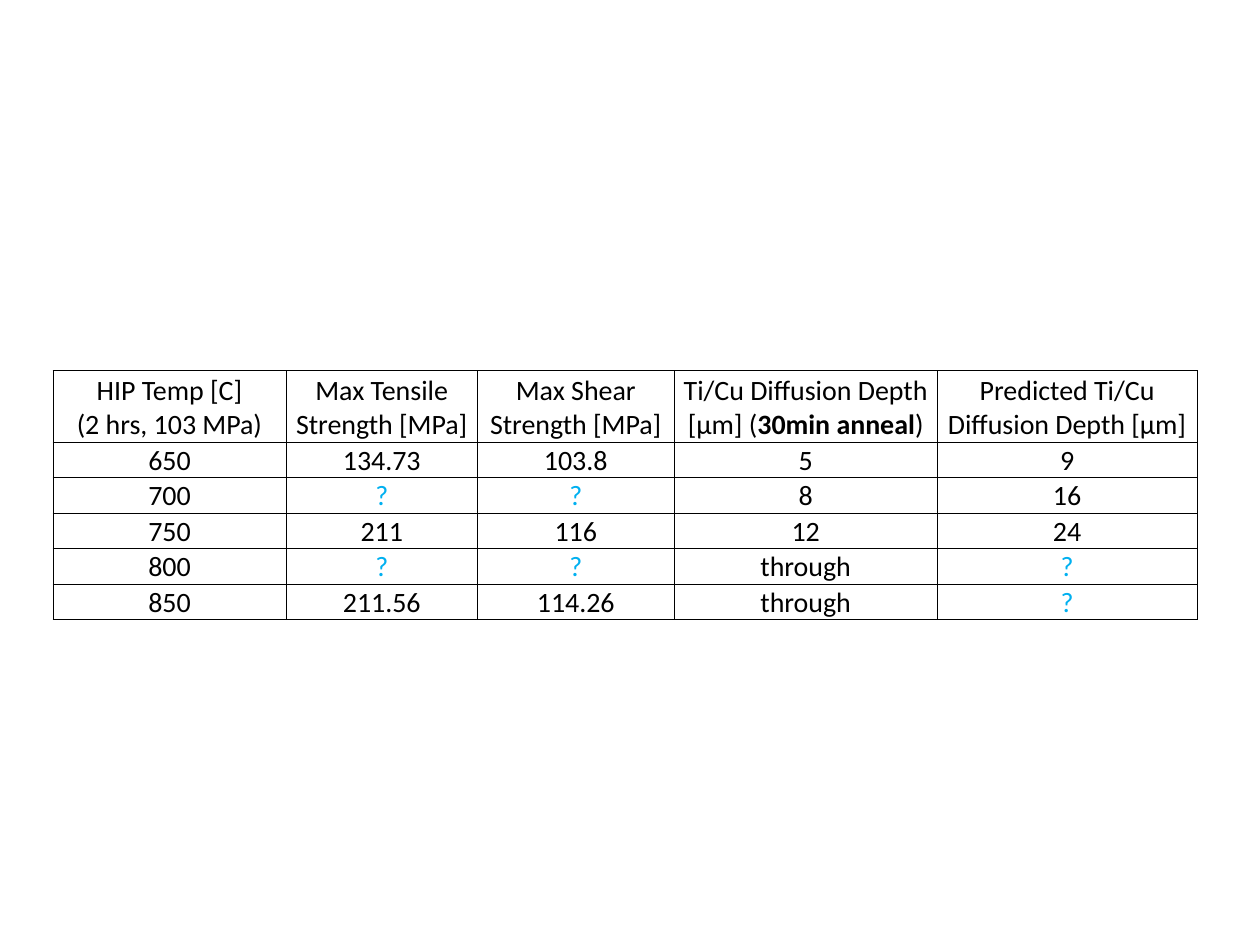
from lxml.etree import SubElement
from pptx import Presentation
from pptx.dml.color import RGBColor
from pptx.enum.text import MSO_ANCHOR as Anchor, PP_ALIGN as Align
from pptx.oxml.ns import qn
from pptx.util import Inches, Pt

BLACK = RGBColor(0x00, 0x00, 0x00)
UNKNOWN_BLUE = RGBColor(0x00, 0xB0, 0xF0)
FONT = "Calibri"
COLUMN_WIDTHS = [1.85, 1.52, 1.56, 2.09, 2.06]
HEADER_HEIGHT, ROW_HEIGHT = 0.57, 0.21

# Each heading is a list of (text, bold) runs.
HEADINGS = [
    [("HIP Temp [C]\n(2 hrs, 103 MPa)", False)],
    [("Max Tensile Strength [MPa]", False)],
    [("Max Shear Strength [MPa]", False)],
    [("Ti/Cu Diffusion Depth [μm] (", False), ("30min anneal", True), (")", False)],
    [("Predicted Ti/Cu Diffusion Depth [μm]", False)],
]
RESULTS = [
    ["650", "134.73", "103.8", "5", "9"],
    ["700", "?", "?", "8", "16"],
    ["750", "211", "116", "12", "24"],
    ["800", "?", "?", "through", "?"],
    ["850", "211.56", "114.26", "through", "?"],
]


def add_run(para, text, bold):
    """Add a run; a newline in the text becomes a line break."""
    for number, line in enumerate(text.split("\n")):
        if number:
            para.add_line_break()
        span = para.add_run()
        span.text = line
        span.font.name = FONT
        span.font.size = Pt(16)
        span.font.bold = bold
        span.font.color.rgb = UNKNOWN_BLUE if line == "?" else BLACK


def add_borders(cell):
    properties = cell._tc.get_or_add_tcPr()
    for side in ("a:lnL", "a:lnR", "a:lnT", "a:lnB"):
        line = SubElement(properties, qn(side), w=str(Pt(0.5)))
        fill = SubElement(line, qn("a:solidFill"))
        SubElement(fill, qn("a:srgbClr"), val=str(BLACK))


def fill_cell(cell, runs):
    cell.margin_left = cell.margin_right = cell.margin_top = Inches(0.01)
    cell.margin_bottom = 0
    cell.vertical_anchor = Anchor.BOTTOM
    add_borders(cell)
    cell.fill.background()
    para = cell.text_frame.paragraphs[0]
    para.alignment = Align.CENTER
    for text, bold in runs:
        add_run(para, text, bold)


def add_results_table(page):
    rows = [HEADINGS] + [[[(value, False)] for value in result] for result in RESULTS]
    height = HEADER_HEIGHT + ROW_HEIGHT * len(RESULTS)
    table = page.shapes.add_table(
        len(rows), len(COLUMN_WIDTHS), Inches(0.42), Inches(2.94),
        Inches(sum(COLUMN_WIDTHS)), Inches(height)).table
    table.first_row = table.horz_banding = False
    for column, width in zip(table.columns, COLUMN_WIDTHS):
        column.width = Inches(width)
    for number, (row, contents) in enumerate(zip(table.rows, rows)):
        row.height = Inches(ROW_HEIGHT if number else HEADER_HEIGHT)
        for cell, runs in zip(row.cells, contents):
            fill_cell(cell, runs)


def main():
    deck = Presentation()
    deck.slide_width, deck.slide_height = Inches(10), Inches(7.5)
    page = deck.slides.add_slide(deck.slide_layouts[6])
    add_results_table(page)
    deck.save("out.pptx")


if __name__ == "__main__":
    main()
